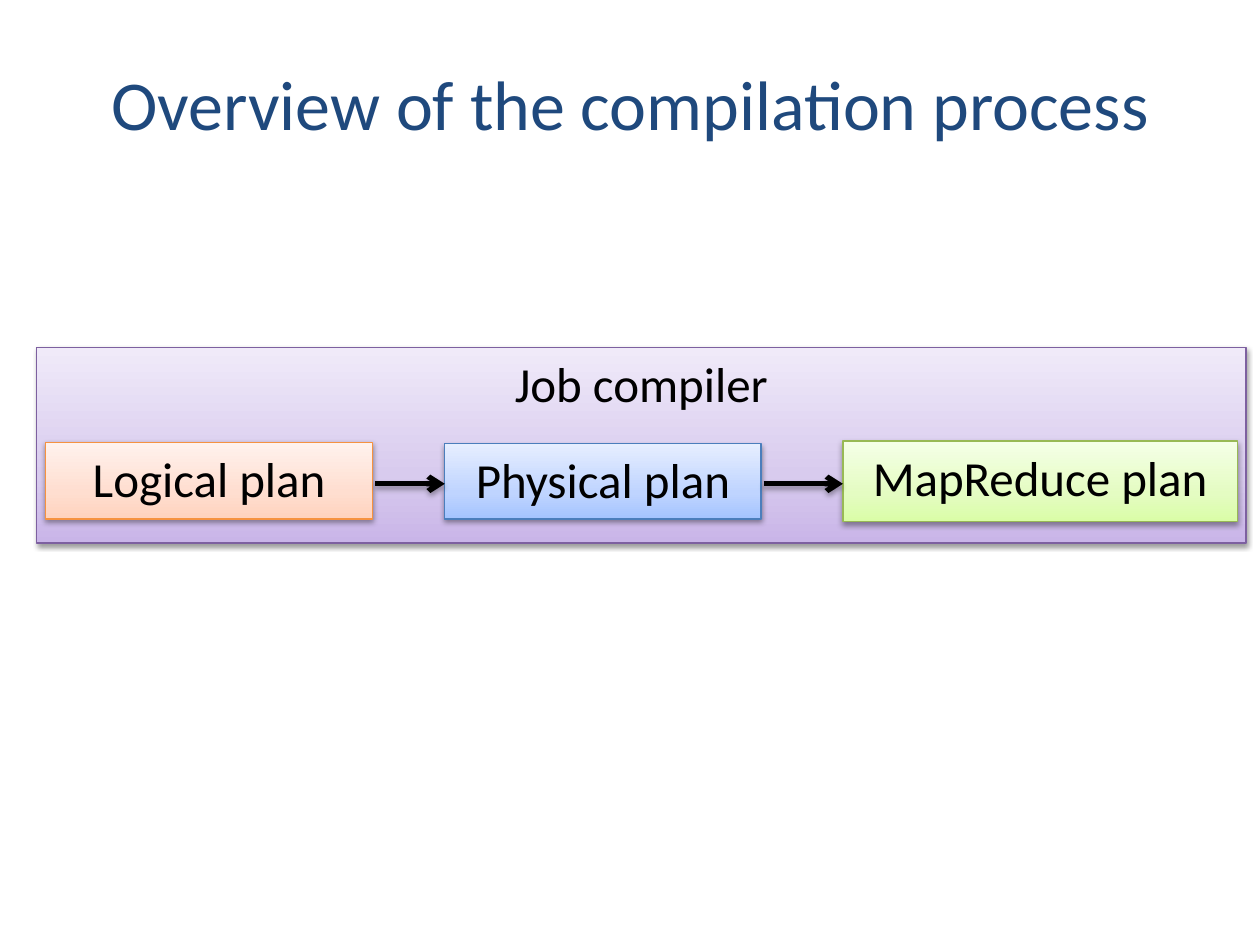
from copy import deepcopy

from lxml.etree import SubElement
from pptx import Presentation
from pptx.dml.color import RGBColor
from pptx.enum.shapes import MSO_CONNECTOR, MSO_SHAPE
from pptx.enum.text import MSO_ANCHOR, PP_ALIGN
from pptx.oxml.ns import qn
from pptx.util import Inches, Pt

BLACK = RGBColor(0x00, 0x00, 0x00)
NAVY = RGBColor(0x1F, 0x49, 0x7D)

# Each theme: outline, then gradient colours from bottom to top.
PURPLE = (RGBColor(0x7D, 0x60, 0xA0), RGBColor(0xC9, 0xB5, 0xE8),
          RGBColor(0xD8, 0xCB, 0xEE), RGBColor(0xF0, 0xEA, 0xF9))
ORANGE = (RGBColor(0xF6, 0x92, 0x40), RGBColor(0xFF, 0xD2, 0xBD),
          RGBColor(0xFF, 0xDE, 0xD0), RGBColor(0xFF, 0xF2, 0xED))
BLUE = (RGBColor(0x4B, 0x7E, 0xBC), RGBColor(0xA4, 0xC4, 0xFF),
        RGBColor(0xBF, 0xD4, 0xFF), RGBColor(0xE6, 0xEE, 0xFF))
GREEN = (RGBColor(0x98, 0xB9, 0x55), RGBColor(0xDA, 0xFD, 0xA7),
         RGBColor(0xE4, 0xFC, 0xC2), RGBColor(0xF5, 0xFF, 0xE7))
GRADIENT_POSITIONS = (0, 0.35, 1)

# Text, left, top, width, height, theme
STAGES = (
    ("Logical plan", 0.36, 3.51, 2.6, 0.61, ORANGE),
    ("Physical plan", 3.53, 3.52, 2.51, 0.6, BLUE),
    ("MapReduce plan", 6.69, 3.5, 3.13, 0.64, GREEN),
)
ARROW_Y = 3.84
ARROW_GAP = 0.02


def write_text(s, text, size=28, color=BLACK, anchor=MSO_ANCHOR.TOP,
               space_before=None):
    """Write one centred paragraph; space_before is a percentage of the line."""
    tf = s.text_frame
    tf.word_wrap = True
    tf.vertical_anchor = anchor
    p = tf.paragraphs[0]
    p.alignment = PP_ALIGN.CENTER
    if space_before:
        before = SubElement(p._p.get_or_add_pPr(), qn("a:spcBef"))
        SubElement(before, qn("a:spcPct"), val=str(space_before * 1000))
    r = p.add_run()
    r.text = text
    r.font.name = "Calibri"
    r.font.size = Pt(size)
    r.font.color.rgb = color


def add_shadow(s, distance, opacity):
    """Give the shape a soft shadow straight below it."""
    effects = SubElement(s._element.spPr, qn("a:effectLst"))
    shadow = SubElement(effects, qn("a:outerShdw"), blurRad=str(Pt(3.15)),
                        dist=str(Pt(distance)), dir="5400000", rotWithShape="0")
    color = SubElement(shadow, qn("a:srgbClr"), val=str(BLACK))
    SubElement(color, qn("a:alpha"), val=str(opacity * 1000))


def fill_gradient(s, colors):
    s.fill.gradient()
    s.fill.gradient_angle = 90
    stops = s._element.spPr.find(".//" + qn("a:gsLst"))
    stops.append(deepcopy(stops[-1]))
    for stop, color, position in zip(s.fill.gradient_stops, colors,
                                     GRADIENT_POSITIONS):
        stop.color.rgb = color
        stop.position = position


def add_box(slide, text, left, top, width, height, theme):
    outline, *colors = theme
    s = slide.shapes.add_shape(MSO_SHAPE.RECTANGLE, Inches(left), Inches(top),
                               Inches(width), Inches(height))
    fill_gradient(s, colors)
    s.line.color.rgb = outline
    s.line.width = Pt(0.75)
    add_shadow(s, distance=1.6, opacity=38)
    write_text(s, text, space_before=20)


def add_arrow(slide, start, end, y):
    s = slide.shapes.add_connector(MSO_CONNECTOR.STRAIGHT, Inches(start),
                                   Inches(y), Inches(end), Inches(y))
    s.line.color.rgb = BLACK
    s.line.width = Pt(3)
    SubElement(s.line._get_or_add_ln(), qn("a:tailEnd"), type="arrow")
    add_shadow(s, distance=1.8, opacity=35)


def add_title(slide, text):
    s = slide.shapes.add_textbox(Inches(0.5), Inches(0.19), Inches(9),
                                 Inches(1.25))
    write_text(s, text, size=40, color=NAVY, anchor=MSO_ANCHOR.MIDDLE)


def main():
    prs = Presentation()
    prs.slide_width, prs.slide_height = Inches(10), Inches(7.5)
    slide = prs.slides.add_slide(prs.slide_layouts[6])

    add_title(slide, "Overview of the compilation process")
    add_box(slide, "Job compiler", 0.29, 2.76, 9.6, 1.55, PURPLE)
    for stage in STAGES:
        add_box(slide, *stage)
    for (_, left, _, width, *_), (_, next_left, *_) in zip(STAGES, STAGES[1:]):
        add_arrow(slide, left + width + ARROW_GAP, next_left, ARROW_Y)

    prs.save("out.pptx")


if __name__ == "__main__":
    main()
